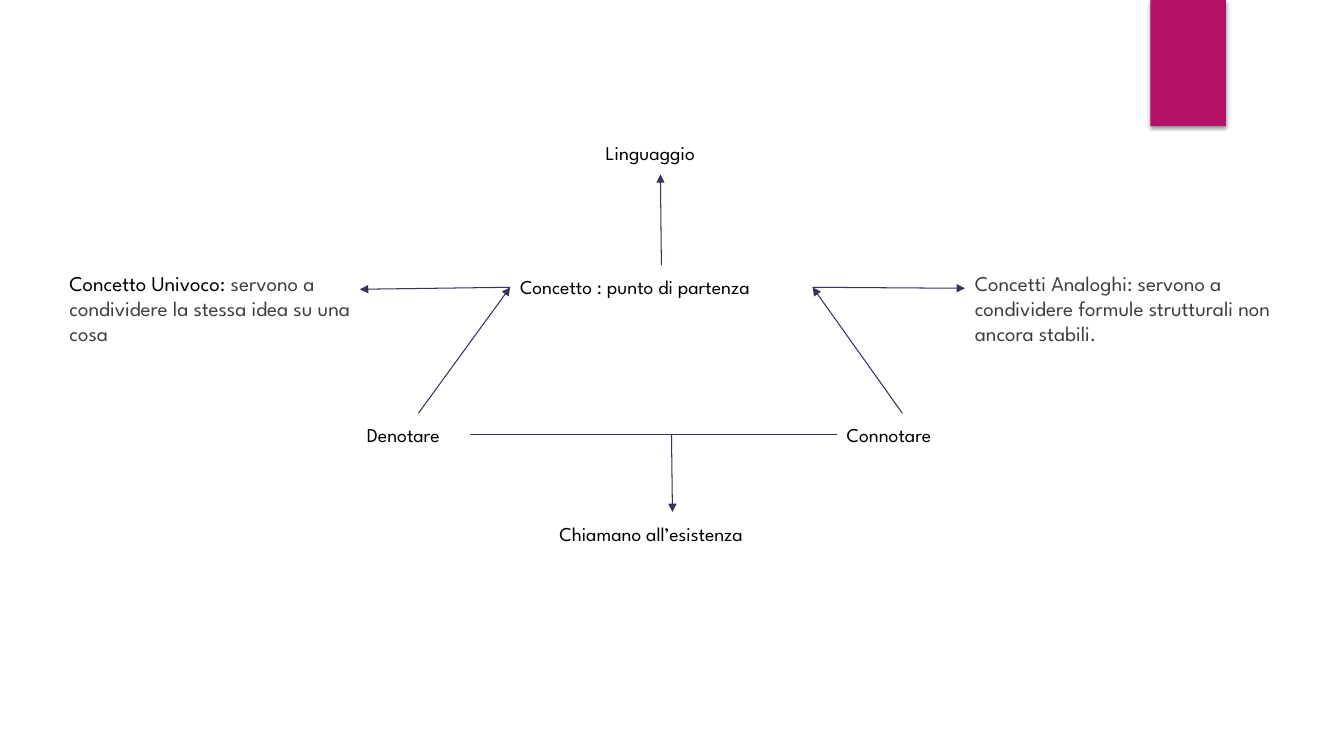
from lxml import etree
from pptx import Presentation
from pptx.dml.color import RGBColor
from pptx.enum import shapes, text
from pptx.oxml import parse_xml
from pptx.oxml.ns import qn
from pptx.util import Inches, Pt

FONT = "League Spartan"
COLORS = {"tab": "B31166", "line": "3B3059", "black": "000000", "gray": "3F3F3F"}
TAB = (11.41, 0, 0.75, 1.25)
LABEL_HEIGHT = 0.44
LABELS = [
    ("Linguaggio", 5.91, 1.3, 1.3),
    ("Concetto : punto di partenza", 5.06, 2.63, 3),
    ("Denotare", 3.54, 4.1, 1.12),
    ("Connotare", 8.3, 4.1, 1.3),
    ("Chiamano all’esistenza", 5.45, 5.08, 2.44),
]
DEFINITIONS = [
    ([("Concetto Univoco: ", "black"),
      ("servono a condividere la stessa idea su una cosa", "gray")],
     (0.59, 2.58, 3.17, 0.96)),
    ([("Concetti Analoghi: servono a condividere formule strutturali non ancora stabili.", "gray")],
     (9.57, 2.58, 3.31, 1.2)),
]
CONCEPT_LEFT, CONCEPT_RIGHT = (5.06, 2.85), (8.06, 2.85)
ARROWS = [
    ((4.15, 4.1), CONCEPT_LEFT),
    ((8.95, 4.1), CONCEPT_RIGHT),
    ((6.56, 2.63), (6.55, 1.73)),
    (CONCEPT_LEFT, (3.57, 2.87)),
    (CONCEPT_RIGHT, (9.57, 2.86)),
    ((6.66, 4.31), (6.67, 5.08)),
]
BASE_LINE = ((4.66, 4.31), (8.3, 4.31))
SHADOW = (
    '<a:effectLst xmlns:a="http://schemas.openxmlformats.org/drawingml/2006/main">'
    '<a:outerShdw blurRad="38100" dist="25400" dir="5400000" rotWithShape="0">'
    '<a:srgbClr val="000000"><a:alpha val="44000"/></a:srgbClr>'
    '</a:outerShdw></a:effectLst>'
)


def rgb(name):
    return RGBColor.from_string(COLORS[name])


def add_text(s, runs, box, size):
    tf = s.shapes.add_textbox(*map(Inches, box)).text_frame
    tf.word_wrap = True
    tf.vertical_anchor = text.MSO_ANCHOR.TOP
    tf.margin_left = tf.margin_right = tf.margin_top = tf.margin_bottom = Inches(0.1)
    p = tf.paragraphs[0]
    for words, color in runs:
        r = p.add_run()
        r.text = words
        r.font.name = FONT
        r.font.size = Pt(size)
        r.font.color.rgb = rgb(color)


def add_line(s, start, end, arrow):
    line = s.shapes.add_connector(
        shapes.MSO_CONNECTOR.STRAIGHT, *map(Inches, start + end))
    line.line.color.rgb = rgb("line")
    line.line.width = Pt(0.75)
    if arrow:
        etree.SubElement(line.line._get_or_add_ln(), qn("a:tailEnd"), type="triangle")
    etree.SubElement(line._element.spPr, qn("a:effectLst"))


def add_tab(s):
    sp = s.shapes.add_shape(shapes.MSO_SHAPE.RECTANGLE, *map(Inches, TAB))
    sp.fill.solid()
    sp.fill.fore_color.rgb = rgb("tab")
    sp.line.fill.background()
    sp._element.spPr.append(parse_xml(SHADOW))


def main():
    prs = Presentation()
    prs.slide_width, prs.slide_height = Inches(13.33), Inches(7.5)
    s = prs.slides.add_slide(prs.slide_layouts[6])
    add_tab(s)
    for words, left, top, width in LABELS:
        add_text(s, [(words, "black")], (left, top, width, LABEL_HEIGHT), 14)
    for runs, box in DEFINITIONS:
        add_text(s, runs, box, 15)
    for start, end in ARROWS:
        add_line(s, start, end, True)
    add_line(s, *BASE_LINE, False)
    prs.save("out.pptx")


if __name__ == "__main__":
    main()
